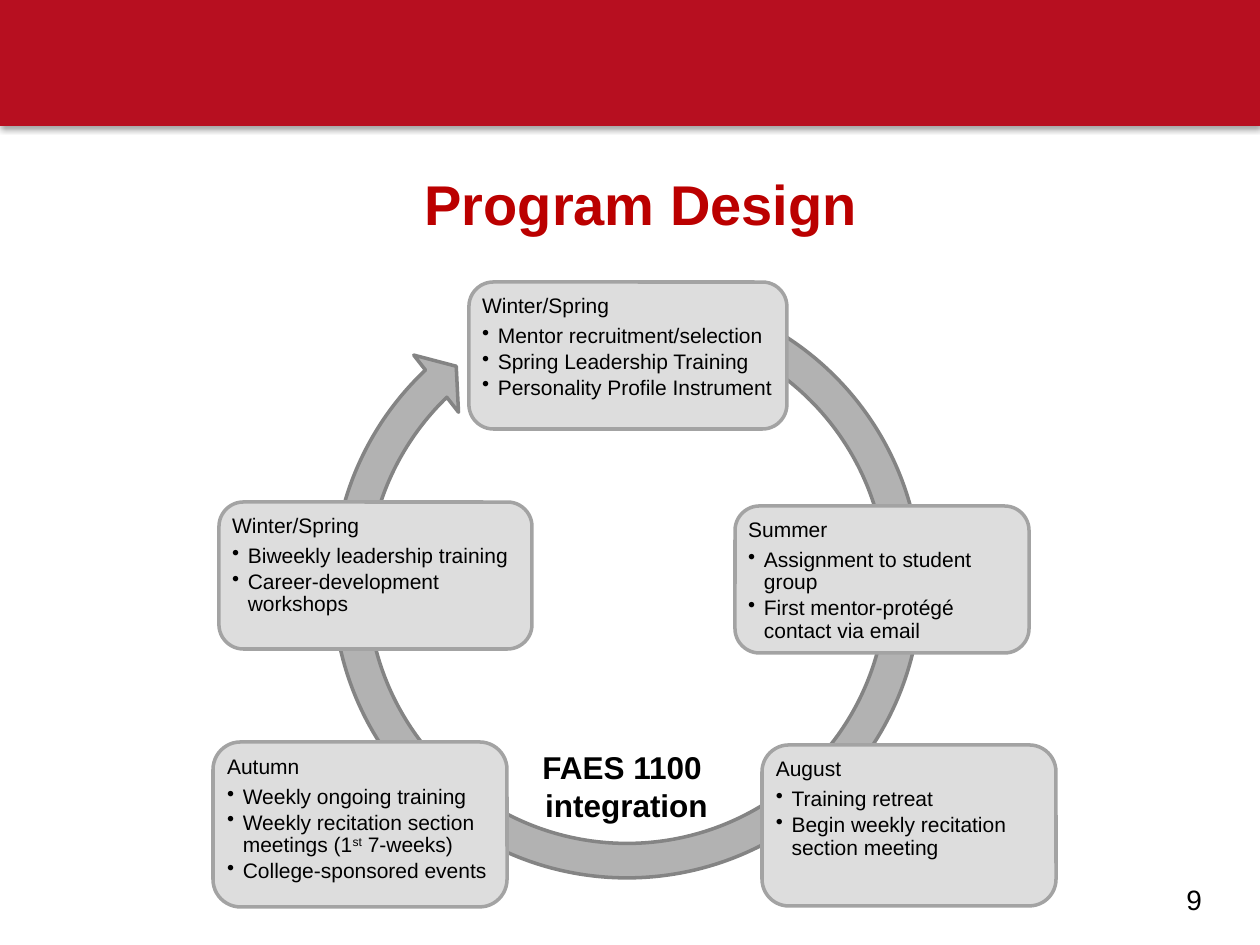
"""Build the Program Design slide: a yearly cycle of five mentoring stages."""
from lxml import etree
from pptx import Presentation, util as u
from pptx.enum import shapes, text
from pptx.dml.color import RGBColor
from pptx.oxml import parse_xml
from pptx.oxml.ns import nsdecls, qn

PX = 914400 / 126
COLORS = {
    "banner": "B70F20", "title": "BB0000", "ink": "000000",
    "ring": "B2B2B2", "ring_edge": "848484",
    "card": "DDDDDD", "card_edge": "A3A3A3",
}
TITLE = "Program Design"
COURSE = ["FAES 1100 ", "integration"]
PAGE = "9"
RING_ANGLES = (0.055, 3.307, 135.83, 175.045, 0.058)
STAGES = [
    ((469, 282, 318, 147), "Winter/Spring",
     ["Mentor recruitment/selection", "Spring Leadership Training",
      "Personality Profile Instrument"]),
    ((735, 506, 294, 147), "Summer",
     ["Assignment to student group", "First mentor-protégé contact via email"]),
    ((762, 745, 294, 161), "August",
     ["Training retreat", "Begin weekly recitation section meeting"]),
    ((213, 742, 294, 165), "Autumn",
     ["Weekly ongoing training",
      "Weekly recitation section meetings (1^st^ 7-weeks)",
      "College-sponsored events"]),
    ((219, 502, 313, 147), "Winter/Spring",
     ["Biweekly leadership training", "Career-development workshops"]),
]
SHADOW = (
    f'<a:effectLst {nsdecls("a")}><a:outerShdw blurRad="40000" dist="23000" '
    'dir="5400000" rotWithShape="0"><a:srgbClr val="000000">'
    '<a:alpha val="35000"/></a:srgbClr></a:outerShdw></a:effectLst>'
)


def px(*lengths):
    return [u.Emu(round(n * PX)) for n in lengths]


def add_bullet(paragraph):
    props = paragraph._p.get_or_add_pPr()
    indent = u.Inches(0.125)
    props.set("marL", str(indent))
    props.set("indent", str(-indent))
    props.set("lvl", "1")
    etree.SubElement(props, qn("a:buChar")).set("char", "•")


def write(frame, lines, size=12, color="ink", bold=False, align="LEFT",
          bulleted=False):
    """Fill a frame; ^marks^ raise text, and bulleted keeps line one as a heading."""
    for i, line in enumerate(lines):
        paragraph = frame.paragraphs[0] if i == 0 else frame.add_paragraph()
        if bulleted:
            if i:
                add_bullet(paragraph)
            paragraph.line_spacing = 0.9
            paragraph.space_after = u.Pt(1.8 if i else 4.2)
        paragraph.alignment = text.PP_ALIGN[align]
        for j, part in enumerate(line.split("^")):
            run = paragraph.add_run()
            run.text = part
            run.font.name = "Arial"
            run.font.size = u.Pt(size)
            run.font.bold = bold
            run.font.color.rgb = RGBColor.from_string(COLORS[color])
            if j % 2:
                run._r.get_or_add_rPr().set("baseline", "30000")


def add_block(slide, kind, box, fill, edge=None):
    block = slide.shapes.add_shape(shapes.MSO_SHAPE[kind], *px(*box))
    block.shadow.inherit = False
    block.fill.solid()
    block.fill.fore_color.rgb = RGBColor.from_string(COLORS[fill])
    if edge:
        block.line.color.rgb = RGBColor.from_string(COLORS[edge])
        block.line.width = u.Pt(2)
    else:
        block.line.fill.background()
    return block


def add_label(slide, box, lines, **style):
    frame = slide.shapes.add_textbox(*px(*box)).text_frame
    frame.word_wrap = False
    frame.auto_size = text.MSO_AUTO_SIZE.SHAPE_TO_FIT_TEXT
    write(frame, lines, **style)


def main():
    deck = Presentation()
    deck.slide_width, deck.slide_height = px(1260, 945)
    slide = deck.slides.add_slide(deck.slide_layouts[5])

    banner = add_block(slide, "RECTANGLE", (0, 0, 1260, 126), "banner")
    props = banner._element.spPr
    props.replace(props.find(qn("a:effectLst")), parse_xml(SHADOW))

    title = slide.shapes.title
    title.left, title.top, title.width, title.height = px(412, 157, 470, 141)
    frame = title.text_frame
    frame.vertical_anchor = text.MSO_ANCHOR.TOP
    frame.auto_size = text.MSO_AUTO_SIZE.NONE
    frame.margin_top = px(12)[0]
    write(frame, [TITLE], size=32, color="title", bold=True)

    ring = add_block(slide, "CIRCULAR_ARROW", (314, 271, 626, 626),
                     "ring", "ring_edge")
    for i, value in enumerate(RING_ANGLES):
        ring.adjustments[i] = value

    for box, season, tasks in STAGES:
        card = add_block(slide, "ROUNDED_RECTANGLE", box, "card", "card_edge")
        frame = card.text_frame
        frame.word_wrap = True
        frame.vertical_anchor = text.MSO_ANCHOR.TOP
        frame.margin_left, frame.margin_top, frame.margin_right = px(6, 6, 3)
        write(frame, [season, *tasks], bulleted=True)

    add_label(slide, (529, 742, 195, 89), COURSE, size=18, bold=True,
              align="CENTER")
    add_label(slide, (1174, 876, 60, 47), [PAGE], size=16)
    deck.save("out.pptx")


if __name__ == "__main__":
    main()
